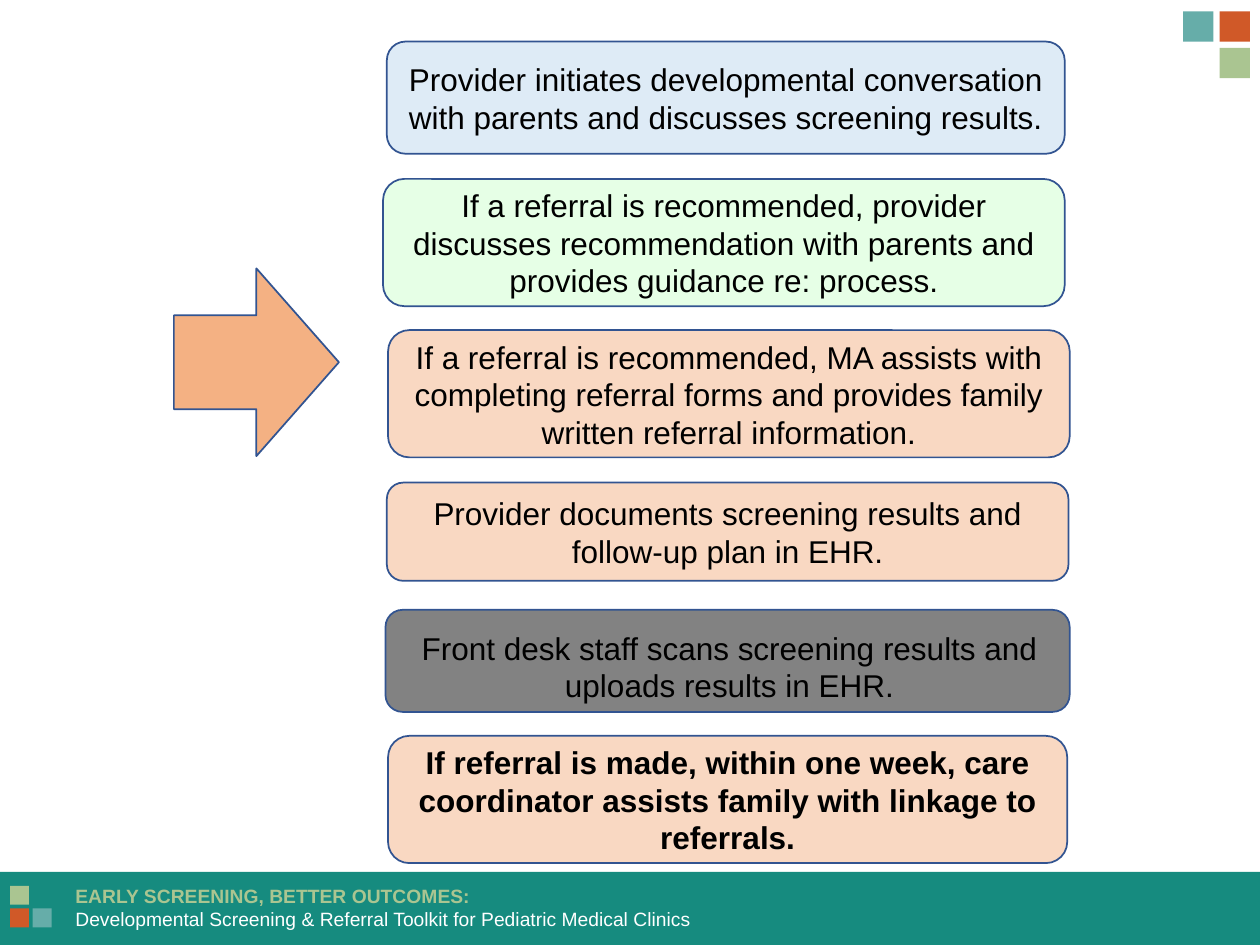
from dataclasses import dataclass

from lxml import etree
from pptx import Presentation
from pptx.dml.color import RGBColor
from pptx.enum import shapes, text
from pptx.oxml import ns
from pptx.util import Inches, Pt


@dataclass(frozen=True)
class Theme:
    font: str = "Arial"
    step_size: int = 18
    footer_size: int = 11
    line_width: int = 1
    step_alpha: int = 49
    ink: str = "000000"
    white: str = "FFFFFF"
    outline: str = "325491"
    band: str = "168B7F"
    sage: str = "AAC591"
    rust: str = "D05928"
    teal: str = "66ADA9"
    peach: str = "F4B183"
    blue: str = "BDD7EE"
    mint: str = "CCFFCC"


THEME = Theme()
SHAPE = shapes.MSO_SHAPE

# Step box, fill, wording, bold, separate text area (None: text sits in the box)
STEPS = [
    ((3.07, 0.33, 5.38, 0.89), THEME.blue,
     "Provider initiates developmental conversation with parents and "
     "discusses screening results.", False, None),
    ((3.04, 1.42, 5.41, 1.01), THEME.mint,
     "If a referral is recommended, provider discusses recommendation with "
     "parents and provides guidance re: process.", False, None),
    ((3.08, 2.62, 5.41, 1.01), THEME.peach,
     "If a referral is recommended, MA assists with completing referral forms "
     "and provides family written referral information.", False,
     (3.08, 2.63, 5.41, 1.01)),
    ((3.07, 3.83, 5.41, 0.78), THEME.peach,
     "Provider documents screening results and follow-up plan in EHR.",
     False, None),
    ((3.06, 4.84, 5.43, 0.81), THEME.ink,
     "Front desk staff scans screening results and uploads results in EHR.",
     False, (3.13, 4.94, 5.32, 0.71)),
    ((3.08, 5.84, 5.39, 1.01), THEME.peach,
     "If referral is made, within one week, care coordinator assists family "
     "with linkage to referrals.", True, None),
]


def inches(box):
    return [Inches(v) for v in box]


def add_filled(slide, kind, box, color, outlined=False, alpha=None):
    sp = slide.shapes.add_shape(kind, *inches(box))
    sp.shadow.inherit = False
    sp.fill.solid()
    sp.fill.fore_color.rgb = RGBColor.from_string(color)
    if alpha is not None:
        clr = sp.fill._xPr.find(".//" + ns.qn("a:srgbClr"))
        etree.SubElement(clr, ns.qn("a:alpha"), val=str(alpha * 1000))
    if outlined:
        sp.line.color.rgb = RGBColor.from_string(THEME.outline)
        sp.line.width = Pt(THEME.line_width)
    else:
        sp.line.fill.background()
    return sp


def write(p, words, size, color, bold=False):
    p.text = words
    p.font.name = THEME.font
    p.font.size = Pt(size)
    p.font.bold = bold
    p.font.color.rgb = RGBColor.from_string(color)


def add_text_box(slide, box):
    tb = slide.shapes.add_textbox(*inches(box))
    tb.text_frame.word_wrap = True
    return tb


def add_squares(slide, left, top, size, pitch, cells):
    """Place coloured squares on a grid; cells are (column, row, colour)."""
    for col, row, color in cells:
        box = (left + col * pitch, top + row * pitch, size, size)
        add_filled(slide, SHAPE.RECTANGLE, box, color)


def add_footer(slide, box):
    left, top, width, height = box
    add_filled(slide, SHAPE.RECTANGLE, box, THEME.band)
    tf = add_text_box(slide, (left + 0.5, top + 0.05, 8.67, 0.47)).text_frame
    write(tf.paragraphs[0], "EARLY SCREENING, BETTER OUTCOMES:",
          THEME.footer_size, THEME.sage, bold=True)
    write(tf.add_paragraph(),
          "Developmental Screening & Referral Toolkit for Pediatric Medical Clinics",
          THEME.footer_size, THEME.white)
    add_squares(slide, left + 0.08, top + 0.11, 0.15, 0.18,
                [(0, 0, THEME.sage), (0, 1, THEME.rust), (1, 1, THEME.teal)])


def add_step(slide, box, color, words, bold, text_area):
    holder = add_filled(slide, SHAPE.ROUNDED_RECTANGLE, box, color,
                        outlined=True, alpha=THEME.step_alpha)
    if text_area:
        holder = add_text_box(slide, text_area)
    else:
        holder.text_frame.vertical_anchor = text.MSO_ANCHOR.MIDDLE
    p = holder.text_frame.paragraphs[0]
    p.alignment = text.PP_ALIGN.CENTER
    write(p, words, THEME.step_size, THEME.ink, bold)


def main():
    prs = Presentation()
    prs.slide_width, prs.slide_height = Inches(10), Inches(7.5)
    slide = prs.slides.add_slide(prs.slide_layouts[6])
    add_footer(slide, (0, 6.92, 10, 0.58))
    add_squares(slide, 9.39, 0.09, 0.24, 0.29,
                [(1, 1, THEME.sage), (1, 0, THEME.rust), (0, 0, THEME.teal)])
    for step in STEPS:
        add_step(slide, *step)
    add_filled(slide, SHAPE.RIGHT_ARROW, (1.38, 2.13, 1.31, 1.49),
               THEME.peach, outlined=True)
    prs.save("out.pptx")


if __name__ == "__main__":
    main()
